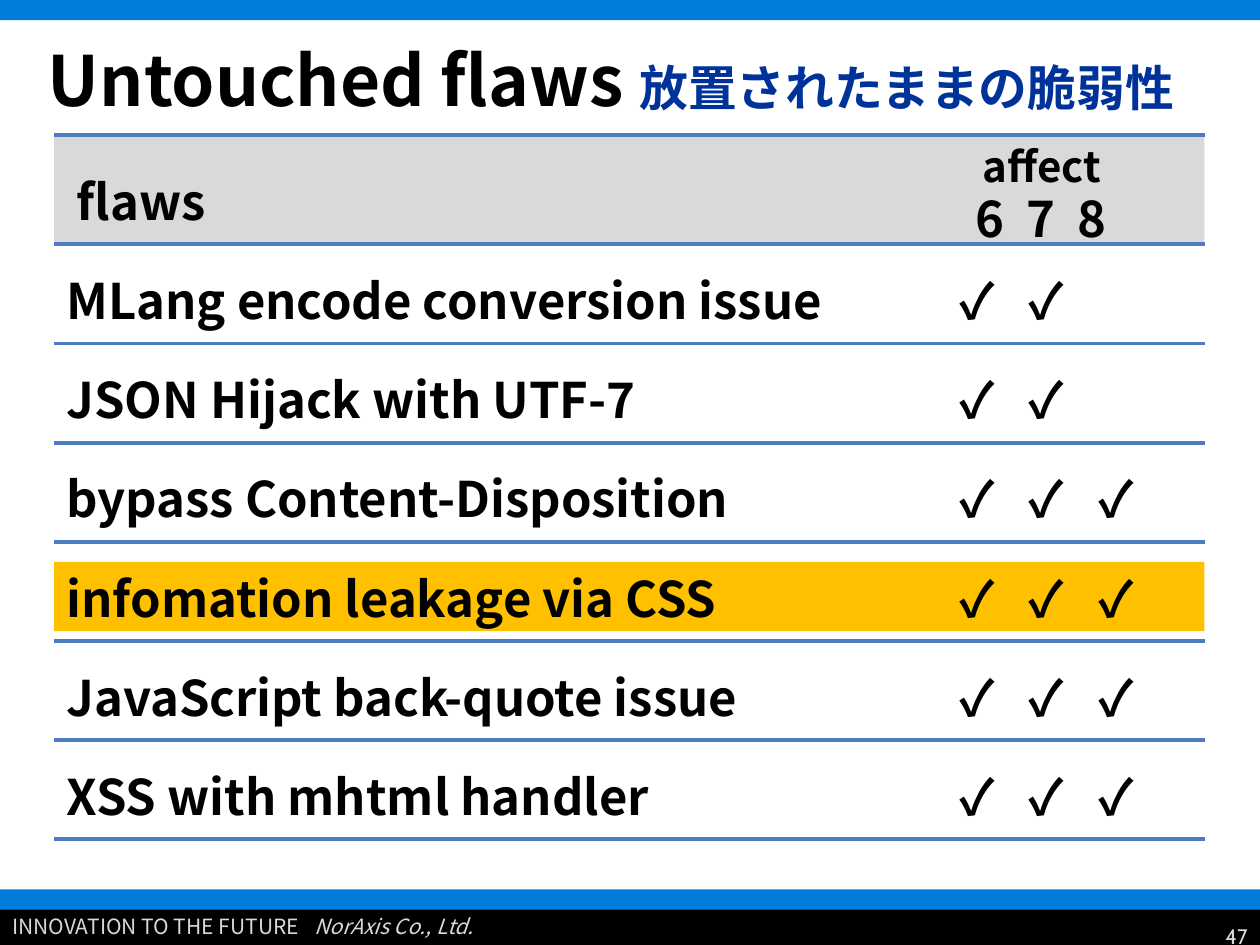
from dataclasses import dataclass

from lxml.etree import SubElement
from pptx import Presentation
from pptx.dml.color import RGBColor
from pptx.enum.shapes import MSO_CONNECTOR as Link, MSO_SHAPE as Shape
from pptx.enum.text import MSO_ANCHOR as Anchor, MSO_AUTO_SIZE as Fit, PP_ALIGN as Align
from pptx.oxml.ns import qn
from pptx.util import Inches, Pt


@dataclass(frozen=True)
class Theme:
    """Colours, fonts and type sizes of the slide."""
    blue: str = "007DDA"
    black: str = "000000"
    pale: str = "D9D9D9"
    gold: str = "FFC000"
    navy: str = "003399"
    rule: str = "4B7EBC"
    font: str = "Noto Sans CJK JP"
    digit: str = "Cabin"
    title: float = 39.6
    sub: float = 27.9
    body: float = 28
    head: float = 24
    foot: float = 12


THEME = Theme()
FLAWS = [
    ("MLang encode conversion issue", 2),
    ("JSON Hijack with UTF-7", 2),
    ("bypass Content-Disposition", 3),
    ("infomation leakage via CSS", 3),
    ("JavaScript back-quote issue", 3),
    ("XSS with mhtml handler", 3),
]
MARKED = 3


def style(font, size, color=THEME.black, bold=True, name=THEME.font):
    """Set size, colour, weight and typeface, East Asian text included."""
    font.size, font.bold, font.name = Pt(size), bold, name
    font.color.rgb = RGBColor.from_string(color)
    SubElement(font._rPr, qn("a:ea"), typeface=name)


def add_bar(slide, x, y, w, h, color):
    """Add a plain filled rectangle."""
    bar = slide.shapes.add_shape(Shape.RECTANGLE, Inches(x), Inches(y), Inches(w), Inches(h))
    bar.shadow.inherit = False
    bar.fill.solid()
    bar.fill.fore_color.rgb = RGBColor.from_string(color)
    bar.line.fill.background()


def add_rule(slide, x, y, w):
    """Add a level table rule."""
    line = slide.shapes.add_connector(
        Link.STRAIGHT, Inches(x), Inches(y), Inches(x + w), Inches(y))
    line.line.color.rgb = RGBColor.from_string(THEME.rule)
    line.line.width = Pt(2.25)
    SubElement(line._element.spPr, qn("a:effectLst"))


def add_text(slide, x, y, w, h, text, size=THEME.body, align=Align.LEFT, **look):
    """Add a one-paragraph text box and return its paragraph."""
    box = slide.shapes.add_textbox(Inches(x), Inches(y), Inches(w), Inches(h))
    frame = box.text_frame
    frame.word_wrap = True
    frame.auto_size = Fit.SHAPE_TO_FIT_TEXT
    para = frame.paragraphs[0]
    para.add_run().text = text
    para.alignment = align
    style(para.font, size, **look)
    return para


def add_title(slide, x, y, w, h):
    """Fill the title placeholder in two sizes and colours."""
    title = slide.shapes.title
    title.left, title.top = Inches(x), Inches(y)
    title.width, title.height = Inches(w), Inches(h)
    frame = title.text_frame
    frame.auto_size = Fit.NONE
    frame.vertical_anchor = Anchor.MIDDLE
    para = frame.paragraphs[0]
    para.alignment = Align.LEFT
    for text, size, color in (("Untouched flaws ", THEME.title, THEME.black),
                              ("放置されたままの脆弱性", THEME.sub, THEME.navy)):
        run = para.add_run()
        run.text = text
        style(run.font, size, color)


def add_frame(slide, w, h):
    """Draw the top band, the footer bands and the footer texts."""
    add_bar(slide, 0, 0, w, 0.16, THEME.blue)
    add_bar(slide, 0, h - 0.36, w, 0.36, THEME.black)
    add_bar(slide, 0, h - 0.44, w, 0.16, THEME.blue)
    look = dict(size=THEME.foot, color=THEME.pale, bold=False)
    para = add_text(slide, 0, h - 0.3, 7.32, 0.3, "INNOVATION TO THE FUTURE", **look)
    name = para.add_run()
    name.text = "\tNorAxis Co., Ltd."
    name.font.italic = True
    tabs = SubElement(para._p.pPr, qn("a:tabLst"))
    para._p.pPr.defRPr.addprevious(tabs)
    SubElement(tabs, qn("a:tab"), pos=str(Inches(2.4)), algn="l")
    add_text(slide, w - 2.33, h - 0.22, 2.33, 0.3, "47",
             align=Align.RIGHT, name=THEME.digit, **look)


def add_head(slide, x, y, w, h):
    """Draw the shaded table head."""
    add_bar(slide, x, y, w, h, THEME.pale)
    add_rule(slide, x, y, w)
    add_rule(slide, x, y + h, w)
    add_text(slide, x + 0.08, y + 0.24, 3.15, 0.57, "flaws")
    add_text(slide, x + 6.62, y, 2.44, 0.5, "affect", THEME.head, Align.CENTER)
    para = add_text(slide, x + 6.61, y + 0.38, 2.44, 0.57, "6 7 8", align=Align.CENTER)
    para.runs[0].font._rPr.set("spc", "315")


def add_rows(slide, x, y, w, h):
    """Draw one ruled row for each flaw, with its ticks."""
    step = h / len(FLAWS)
    for i, (flaw, count) in enumerate(FLAWS):
        top = y + i * step + 0.16
        if i == MARKED:
            add_bar(slide, x, top, w, 0.55, THEME.gold)
        add_text(slide, x, top, 7, 0.57, flaw)
        for col in range(count):
            add_text(slide, x + 6.93 + 0.55 * col, top, 0.79, 0.57, "✓", align=Align.CENTER)
        add_rule(slide, x, y + (i + 1) * step, w)


def main():
    """Build the slide and save it."""
    deck = Presentation()
    deck.slide_width, deck.slide_height = Inches(10), Inches(7.5)
    slide = deck.slides.add_slide(deck.slide_layouts[5])
    add_frame(slide, 10, 7.5)
    add_title(slide, 0.28, 0, 9.72, 1.25)
    add_head(slide, 0.43, 1.07, 9.13, 0.87)
    add_rows(slide, 0.43, 1.94, 9.13, 4.72)
    deck.save("out.pptx")


if __name__ == "__main__":
    main()
